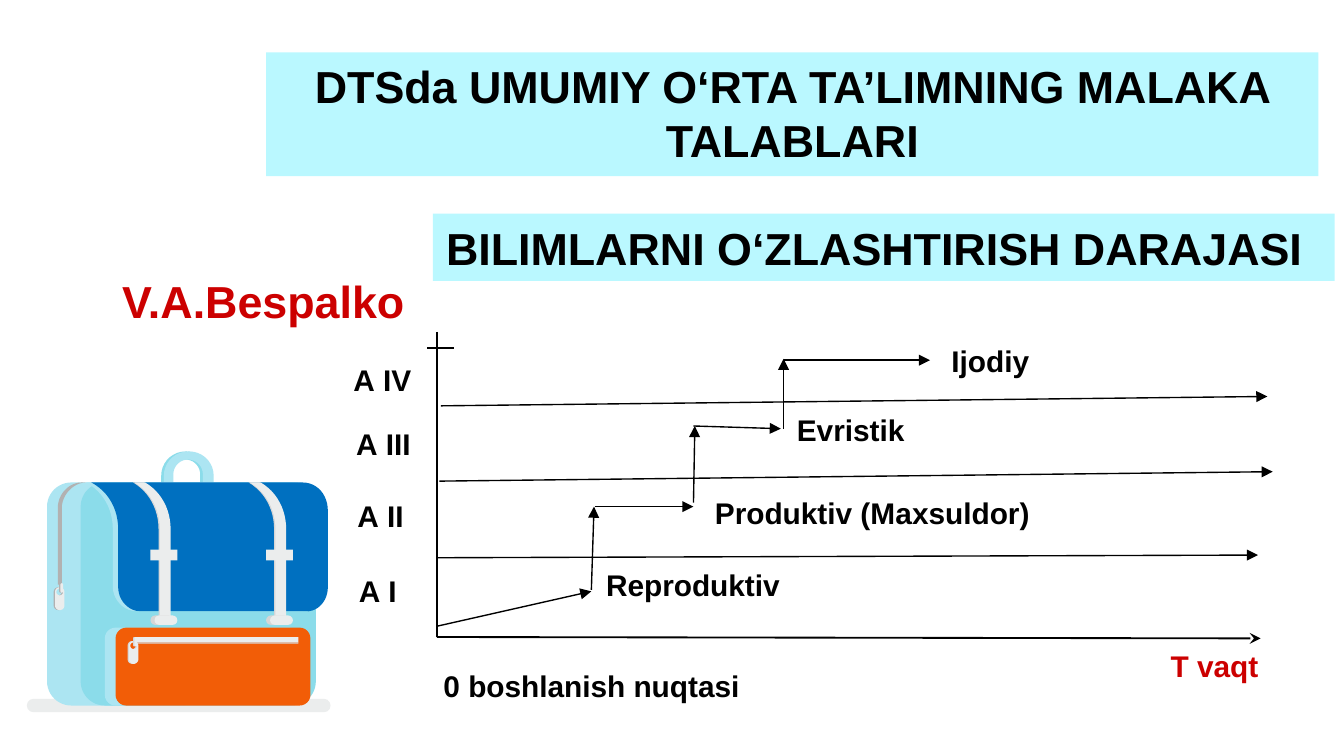
import math
from dataclasses import dataclass

import pptx
import pptx.dml.color
import pptx.enum.shapes
import pptx.enum.text
import pptx.oxml.ns
import pptx.util
from lxml import etree
from pptx.util import Inches


@dataclass(frozen=True)
class Theme:
    font: str = "Arial"
    heading: int = 24
    label: int = 16
    ink: str = "000000"
    accent: str = "CC0000"
    banner: str = "BAF8FF"
    bag_light: str = "ACE5F2"
    bag_mid: str = "8BDCEA"
    flap: str = "0070C0"
    pocket: str = "F25D07"
    trim: str = "EBEDED"
    trim_shade: str = "D6D6D6"
    zip_shade: str = "B2B1B1"


THEME = Theme()
SHAPES = pptx.enum.shapes.MSO_SHAPE
ALIGN = pptx.enum.text.PP_ALIGN


def rgb(color):
    return pptx.dml.color.RGBColor.from_string(color)


def paint(shape, color):
    shape.fill.solid()
    shape.fill.fore_color.rgb = rgb(color)
    shape.line.fill.background()
    shape.shadow.inherit = False


def write(shape, text, size, color, wrap, align=ALIGN.LEFT):
    frame = shape.text_frame
    frame.text = text
    frame.word_wrap = wrap
    frame.auto_size = pptx.enum.text.MSO_AUTO_SIZE.SHAPE_TO_FIT_TEXT
    frame.vertical_anchor = pptx.enum.text.MSO_ANCHOR.TOP
    paragraph = frame.paragraphs[0]
    paragraph.alignment = align
    font = paragraph.runs[0].font
    font.name, font.size, font.bold = THEME.font, pptx.util.Pt(size), True
    font.color.rgb = rgb(color)


def add_label(shapes, text, left, top, width, height=0.36, size=THEME.label,
              color=THEME.ink, wrap=False, indent=0):
    label = shapes.add_textbox(Inches(left), Inches(top), Inches(width), Inches(height))
    frame = label.text_frame
    frame.margin_left, frame.margin_right = Inches(0.06 + indent), Inches(0.06)
    frame.margin_top = frame.margin_bottom = Inches(0.03)
    write(label, text, size, color, wrap)


def add_banner(shapes, text, left, top, width, height, wrap, align):
    banner = shapes.add_shape(SHAPES.RECTANGLE, Inches(left), Inches(top),
                              Inches(width), Inches(height))
    paint(banner, THEME.banner)
    write(banner, text, THEME.heading, THEME.ink, wrap, align)


def add_line(shapes, start, end, weight=0.75, head=None):
    line = shapes.add_connector(pptx.enum.shapes.MSO_CONNECTOR.STRAIGHT,
                                *(Inches(v) for v in (*start, *end)))
    line.line.color.rgb = rgb(THEME.ink)
    line.line.width = pptx.util.Pt(weight)
    if head:
        etree.SubElement(line.line._get_or_add_ln(),
                         pptx.oxml.ns.qn("a:tailEnd"), type=head)
    etree.SubElement(line._element.spPr, pptx.oxml.ns.qn("a:effectLst"))


def flatten(path):
    """Turn points and cubic curves (six numbers) into a list of points."""
    points = []
    for step in path:
        if len(step) == 2:
            points.append(step)
            continue
        x0, y0 = points[-1]
        x1, y1, x2, y2, x3, y3 = step
        for i in range(1, 13):
            t = i / 12
            u = 1 - t
            a, b, c, d = u**3, 3 * u * u * t, 3 * u * t * t, t**3
            points.append((a * x0 + b * x1 + c * x2 + d * x3,
                           a * y0 + b * y1 + c * y2 + d * y3))
    return points


def round_outline(left, top, width, height, radius):
    corners = ((width - radius, height - radius), (radius, height - radius),
               (radius, radius), (width - radius, radius))
    return [(left + x + radius * math.cos(math.radians(90 * quarter + 10 * i)),
             top + y + radius * math.sin(math.radians(90 * quarter + 10 * i)))
            for quarter, (x, y) in enumerate(corners) for i in range(10)]


def add_outline(shapes, left, top, color, *contours):
    placed = [[(Inches(left + x), Inches(top + y)) for x, y in contour]
              for contour in contours]
    builder = shapes.build_freeform(*placed[0][0], scale=1.0)
    builder.add_line_segments(placed[0][1:], close=True)
    for contour in placed[1:]:
        builder.move_to(*contour[0])
        builder.add_line_segments(contour[1:], close=True)
    paint(builder.convert_to_shape(), color)


def add_ring(shapes, left, top, color, outer, hole):
    add_outline(shapes, left, top, color, round_outline(0, 0, *outer),
                round_outline(*hole)[::-1])


def add_panel(shapes, left, top, width, height, radius, color):
    kind = SHAPES.ROUNDED_RECTANGLE if radius else SHAPES.RECTANGLE
    panel = shapes.add_shape(kind, Inches(left), Inches(top), Inches(width), Inches(height))
    if radius:
        panel.adjustments[0] = min(0.5, radius / min(width, height))
    paint(panel, color)


def add_zip_pull(shapes, left, top, shade):
    tones = ((0, shade), (0.01, THEME.trim))
    for shift, color in tones:
        add_ring(shapes, left + shift, top, color, (0.07, 0.17, 0.035),
                 (0.01, 0.01, 0.05, 0.05, 0.025))
    for shift, color in tones:
        add_panel(shapes, left + 0.04 + shift, top - 0.03, 0.02, 0.07, 0.01, color)


def add_strap(shapes, left, top):
    strap = flatten([(0, 0), (0.12, 0.07, 0.19, 0.2, 0.19, 0.35), (0.19, 1.03),
                     (0.27, 1.03), (0.27, 0.35), (0.27, 0.2, 0.2, 0.07, 0.08, 0)])
    for shift, color in ((0, THEME.trim_shade), (0.01, THEME.trim)):
        add_outline(shapes, left + shift, top, color, strap)
    for shift, color in ((0.13, THEME.trim_shade), (0.16, THEME.trim)):
        add_panel(shapes, left + shift, top + 0.99, 0.17, 0.07, 0.035, color)
    add_panel(shapes, left + 0.13, top + 0.5, 0.2, 0.08, 0, THEME.trim)


def add_backpack(slide, left, top):
    bag = slide.shapes.add_group_shape().shapes
    add_panel(bag, left, top + 1.84, 2.26, 0.1, 0.05, THEME.trim)
    for x, color in ((1.0, THEME.bag_mid), (1.02, THEME.bag_light)):
        add_ring(bag, left + x, top, color, (0.37, 0.47, 0.18),
                 (0.07, 0.06, 0.22, 0.28, 0.11))

    add_panel(bag, left + 0.15, top + 0.23, 1.75, 1.66, 0.18, THEME.bag_light)
    zip_track = flatten([(0.18, 0), (0.08, 0, 0, 0.09, 0, 0.19), (0, 0.76), (0.03, 0.76),
                         (0.03, 0.19), (0.03, 0.09, 0.12, 0, 0.21, 0)])
    add_outline(bag, left + 0.23, top + 0.23, THEME.zip_shade, zip_track)
    add_panel(bag, left + 0.4, top + 0.23, 1.75, 1.66, 0.18, THEME.bag_mid)

    flap = flatten([(0, 0), (0.13, 0.07, 0.2, 0.2, 0.2, 0.35), (0.2, 0.78),
                    (0.2, 0.88, 0.28, 0.96, 0.37, 0.96), (1.6, 0.96),
                    (1.69, 0.96, 1.76, 0.88, 1.76, 0.78), (1.76, 0.21),
                    (1.76, 0.09, 1.68, 0, 1.57, 0)])
    for x, color in ((0.44, THEME.bag_light), (0.48, THEME.flap)):
        add_outline(bag, left + x, top + 0.23, color, flap)

    for x, color in ((0.58, THEME.bag_light), (0.66, THEME.pocket)):
        add_panel(bag, left + x, top + 1.31, 1.45, 0.58, 0.08, color)
    add_panel(bag, left + 0.8, top + 1.38, 1.22, 0.04, 0, THEME.trim)
    add_panel(bag, left + 0.8, top + 1.42, 1.22, 0.01, 0, THEME.trim_shade)
    add_zip_pull(bag, left + 0.75, top + 1.41, THEME.trim_shade)
    add_zip_pull(bag, left + 0.2, top + 1.01, THEME.zip_shade)

    flap_edge = flatten([(0, 0), (0, 0.19, 0.09, 0.19, 0.1, 0.19), (1.38, 0.19),
                         (1.41, 0.19, 1.44, 0.18, 1.45, 0.15), (0.19, 0.15),
                         (0.03, 0.15, 0, 0, 0, 0)])
    add_outline(bag, left + 0.64, top + 1.04, THEME.bag_mid, flap_edge)
    for x in (0.79, 1.65):
        add_strap(bag, left + x, top + 0.23)


def add_level_diagram(slide, left, top):
    diagram = slide.shapes.add_group_shape().shapes

    def line(x1, y1, x2, y2, **style):
        add_line(diagram, (left + x1, top + y1), (left + x2, top + y2), **style)

    def label(text, x, y, width, **style):
        add_label(diagram, text, left + x, top + y, width, **style)

    line(0.68, 0, 0.68, 2.27, weight=1)
    line(0.68, 2.27, 6.81, 2.28, weight=1, head="stealth")
    line(0.61, 0.12, 0.81, 0.12, weight=1)
    label("0 boshlanish nuqtasi", 0.67, 2.47, 2.47)
    label("T vaqt", 5.46, 2.32, 1.48, color=THEME.accent, indent=0.62)

    boundaries = ((0.69, 1.68, 6.79, 1.66), (0.7, 1.11, 6.9, 1.04), (0.71, 0.55, 6.86, 0.48))
    steps = ((0.68, 2.19, 1.83, 1.93), (1.83, 1.92, 1.85, 1.3), (1.86, 1.3, 2.59, 1.3),
             (2.59, 1.27, 2.6, 0.7), (2.59, 0.7, 3.24, 0.72), (3.26, 0.72, 3.26, 0.2),
             (3.26, 0.21, 4.35, 0.21))
    for ends in boundaries + steps:
        line(*ends, head="triangle")

    for name, x, y, width in (("Reproduktiv", 1.88, 1.72, 1.56),
                              ("Produktiv (Махsuldor)", 2.69, 1.18, 2.62),
                              ("Evristik", 3.3, 0.56, 0.93), ("Ijodiy", 4.45, 0.05, 0.74)):
        label(name, x, y, width)
    for level, x, y, width in (("А I", 0.04, 1.76, 0.8), ("А II", 0.03, 1.2, 0.71),
                               ("А III", 0.02, 0.67, 0.88), ("А IV", 0, 0.19, 0.69)):
        label(level, x, y, width, wrap=True)


def main():
    deck = pptx.Presentation()
    deck.slide_width = Inches(10)
    deck.slide_height = deck.slide_width * 9 // 16
    slide = deck.slides.add_slide(deck.slide_layouts[6])
    add_backpack(slide, 0.2, 3.36)
    add_level_diagram(slide, 2.57, 2.47)
    add_banner(slide.shapes, "DTSda UMUMIY O‘RTA TA’LIMNING MALAKA TALABLARI",
               1.98, 0.39, 7.83, 0.92, True, ALIGN.CENTER)
    add_banner(slide.shapes, "BILIMLARNI O‘ZLASHTIRISH DARAJASI",
               3.22, 1.59, 6.71, 0.5, False, ALIGN.LEFT)
    add_label(slide.shapes, "V.А.Bespalko", 0.85, 2.01, 2.27, 0.46,
              size=THEME.heading, color=THEME.accent)
    deck.save("out.pptx")


if __name__ == "__main__":
    main()
